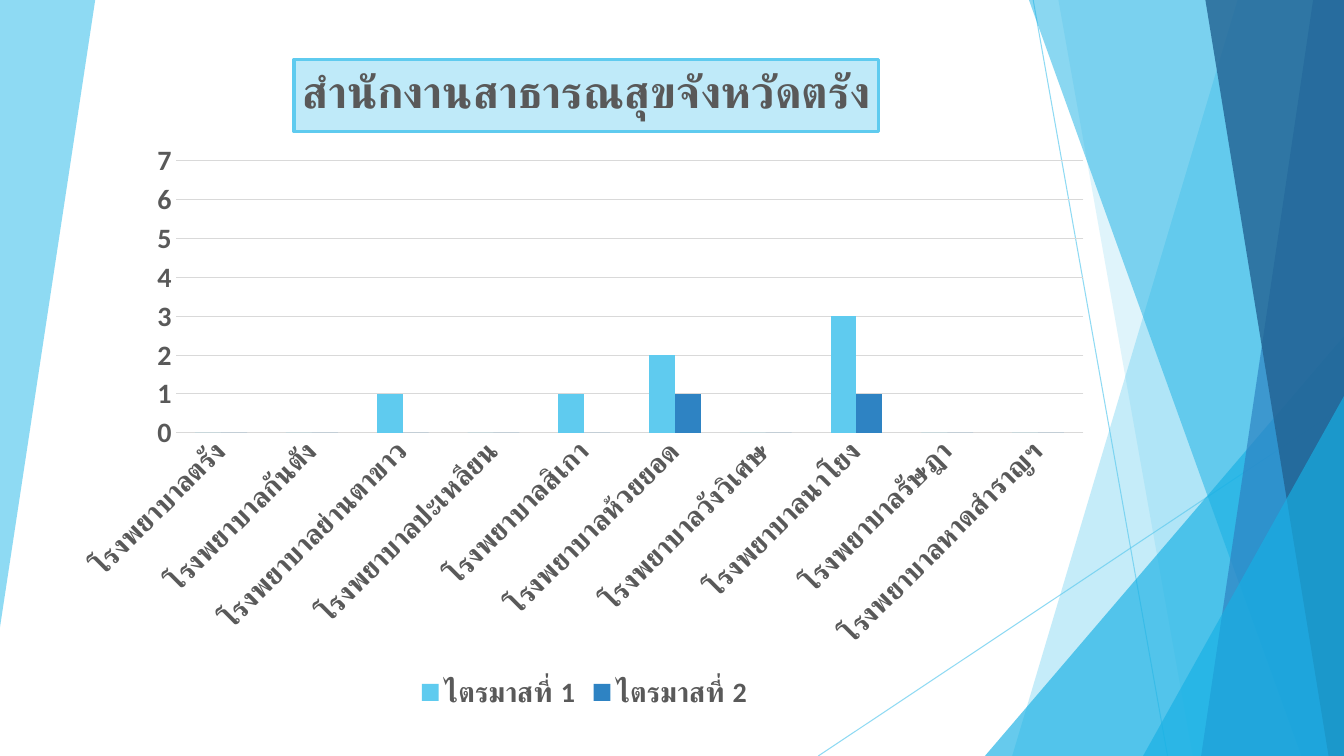
from lxml import etree
from pptx import Presentation
from pptx import util as u
from pptx.chart.data import CategoryChartData
from pptx.dml.color import RGBColor
from pptx.enum import chart as ch, shapes
from pptx.oxml import parse_xml
from pptx.oxml.ns import nsdecls, qn

Pt = u.Pt
SKY = RGBColor(0x5F, 0xCB, 0xEF)
CYAN = RGBColor(0x17, 0xB0, 0xE4)
BLUE = RGBColor(0x2E, 0x83, 0xC3)
NAVY = RGBColor(0x22, 0x62, 0x92)
PALE = RGBColor(0xBF, 0xEA, 0xF9)
GREY = RGBColor(0x59, 0x59, 0x59)
GRID = RGBColor(0xD9, 0xD9, 0xD9)
W, H = 960, 540

prs = Presentation()
prs.slide_width, prs.slide_height = Pt(W), Pt(H)
slide = prs.slides.add_slide(prs.slide_layouts[6])
draw = slide.shapes


def fade(part, alpha):
    for clr in part._element.spPr.iter(qn("a:srgbClr")):
        etree.SubElement(clr, qn("a:alpha"), val=str(alpha * 1000))


def place(node, index, **box):
    for old in node.findall(qn("c:layout")):
        node.remove(old)
    vals = "".join(f'<c:{k} val="{v}"/>' for k, v in box.items())
    node.insert(index, parse_xml(
        f'<c:layout {nsdecls("c")}><c:manualLayout>{vals}'
        '</c:manualLayout></c:layout>'))


# Thin crossing lines
for x1, y1, x2, y2 in [(738, 0, 834, H), (W, 290, 584.5, H)]:
    line = draw.add_connector(shapes.MSO_CONNECTOR.STRAIGHT,
                              Pt(x1), Pt(y1), Pt(x2), Pt(y2))
    line.line.color.rgb = SKY
    line.line.width = Pt(0.75)
    fade(line, 70)
    etree.SubElement(line._element.spPr, qn("a:effectLst"))

# Translucent facets: corner points, or the left and top of a right triangle
facets = [
    ([(0, 0), (68, 0), (0, 448)], SKY, 70),
    ([(884, 0), (W, 0), (W, H), (723, H)], SKY, 36),
    ([(756, 0), (W, 0), (W, H), (852, H)], SKY, 20),
    ((703.5, 240), CYAN, 66),
    ([(735, 0), (W, 0), (W, H), (929.5, H)], CYAN, 50),
    ([(938, 0), (W, 0), (W, H), (858, H)], BLUE, 70),
    ([(861, 0), (W, 0), (W, H), (949, H)], NAVY, 80),
    ((816.5, 283), CYAN, 66),
]
for pts, tint, alpha in facets:
    if isinstance(pts, list):
        pen = draw.build_freeform(Pt(pts[0][0]), Pt(pts[0][1]))
        pen.add_line_segments([(Pt(x), Pt(y)) for x, y in pts[1:]])
        facet = pen.convert_to_shape()
    else:
        x, y = pts
        facet = draw.add_shape(shapes.MSO_SHAPE.ISOSCELES_TRIANGLE,
                               Pt(x), Pt(y), Pt(W - x), Pt(H - y))
        facet.adjustments[0] = 1
    facet.shadow.inherit = False
    facet.fill.solid()
    facet.fill.fore_color.rgb = tint
    facet.line.fill.background()
    fade(facet, alpha)

# Chart data
data = CategoryChartData(number_format="General")
towns = ["ตรัง", "กันตัง", "ย่านตาขาว", "ปะเหลียน", "สิเกา",
         "ห้วยยอด", "วังวิเศษ", "นาโยง", "รัษฎา", "หาดสำราญฯ"]
data.categories = ["โรงพยาบาล" + town for town in towns]
data.add_series("ไตรมาสที่ 1", [0, 0, 1, 0, 1, 2, 0, 3, 0, 0])
data.add_series("ไตรมาสที่ 2", [0, 0, 0, 0, 0, 1, 0, 1, 0, 0])
chart = draw.add_chart(ch.XL_CHART_TYPE.COLUMN_CLUSTERED, Pt(47), Pt(28),
                       Pt(741), Pt(483), data).chart
plot = chart.plots[0]
plot.gap_width, plot.overlap, plot.vary_by_categories = 150, 0, False
for bars, tint in zip(plot.series, (SKY, BLUE)):
    bars.format.fill.solid()
    bars.format.fill.fore_color.rgb = tint

# Title box
chart.has_title = True
title = chart.chart_title
title.text_frame.text = "สำนักงานสาธารณสุขจังหวัดตรัง"
title.include_in_layout = False
title.format.fill.solid()
title.format.fill.fore_color.rgb = PALE
title.format.line.color.rgb = SKY
title.format.line.width = Pt(2.25)
place(title._element, 1, xMode="edge", yMode="edge", x=0.22, y=0.03)
place(chart._chartSpace.chart.plotArea, 0, layoutTarget="inner", xMode="edge",
      yMode="edge", x=0.106, y=0.18, w=0.875, h=0.402)

# Axes and legend
cat, val = chart.category_axis, chart.value_axis
for axis in (cat, val):
    axis.major_tick_mark = axis.minor_tick_mark = ch.XL_TICK_MARK.NONE
    axis.format.line.fill.background()
val.minimum_scale, val.maximum_scale, val.major_unit = 0, 7, 1
val.major_gridlines.format.line.color.rgb = GRID
val.major_gridlines.format.line.width = Pt(0.75)
chart.has_legend = True
chart.legend.position = ch.XL_LEGEND_POSITION.BOTTOM
chart.legend.include_in_layout = False

# Fonts
look = {"name": "Calibri", "bold": True, "size": Pt(20)}
fonts = [chart.font, cat.tick_labels.font, val.tick_labels.font,
         chart.legend.font, title.text_frame.paragraphs[0].runs[0].font]
for font in fonts:
    for key, value in look.items():
        setattr(font, key, value)
    font.color.rgb = GREY
fonts[-1].size = Pt(32)
cat._element.txPr.bodyPr.set("rot", "-2700000")

prs.save("out.pptx")
